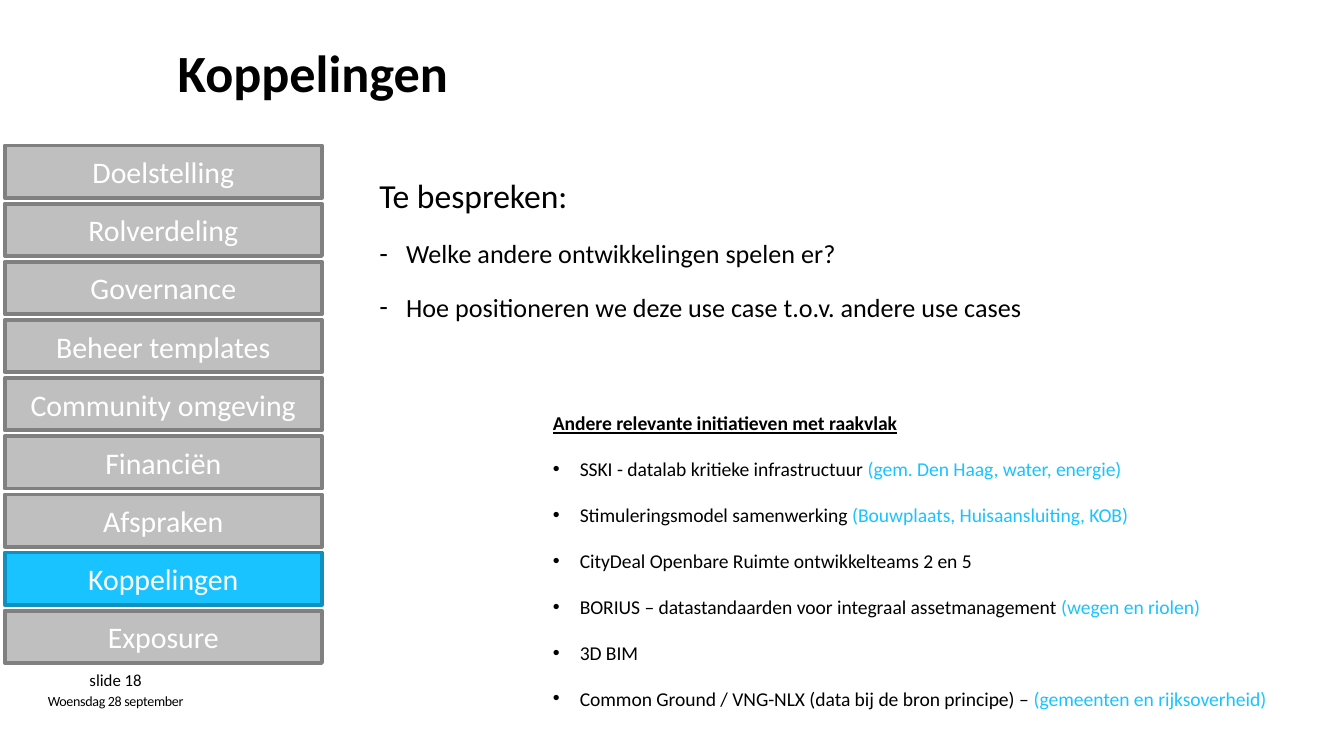
from lxml.etree import SubElement
from pptx import Presentation
from pptx.dml.color import RGBColor
from pptx.enum.shapes import MSO_SHAPE
from pptx.enum.text import MSO_ANCHOR, MSO_AUTO_SIZE, PP_ALIGN
from pptx.oxml.ns import qn
from pptx.util import Pt

COLORS = {
    "text": "000000",
    "inverse": "FFFFFF",
    "idle": "BFBFBF",
    "idle_line": "808080",
    "accent": "19C3FF",
    "accent_line": "1290BD",
}
TOPICS = [
    "Doelstelling", "Rolverdeling", "Governance", "Beheer templates",
    "Community omgeving", "Financiën", "Afspraken", "Koppelingen", "Exposure",
]
ACTIVE_TOPIC = "Koppelingen"
QUESTIONS = [
    ("Welke andere ontwikkelingen spelen er?", ""),
    ("Hoe positioneren we deze use case t.o.v. andere use cases", ""),
]
INITIATIVES = [
    ("SSKI - datalab kritieke infrastructuur ", "(gem. Den Haag, water, energie)"),
    ("Stimuleringsmodel samenwerking ", "(Bouwplaats, Huisaansluiting, KOB)"),
    ("CityDeal Openbare Ruimte ontwikkelteams 2 en 5", ""),
    ("BORIUS – datastandaarden voor integraal assetmanagement ", "(wegen en riolen)"),
    ("3D BIM", ""),
    ("Common Ground / VNG-NLX (data bij de bron principe) – ", "(gemeenten en rijksoverheid)"),
]


class SlideBuilder:
    font_name = "Calibri"
    indent = Pt(14.4)

    def __init__(self, slide):
        self.slide = slide

    def color(self, name):
        return RGBColor.from_string(COLORS[name])

    def place(self, shape, left, top, width, height):
        shape.left, shape.top = Pt(left), Pt(top)
        shape.width, shape.height = Pt(width), Pt(height)

    def format(self, paragraph, size, color="text", bold=False, align=PP_ALIGN.LEFT):
        paragraph.alignment = align
        font = paragraph.font
        font.name, font.size, font.bold = self.font_name, Pt(size), bold
        font.color.rgb = self.color(color)

    def set_bullet(self, paragraph, character=None):
        properties = paragraph._p.get_or_add_pPr()
        properties.set("marL", str(self.indent if character else 0))
        properties.set("indent", str(-self.indent if character else 0))
        if character:
            SubElement(properties, qn("a:buChar"), char=character)
        else:
            SubElement(properties, qn("a:buNone"))

    def title(self, text, *box):
        shape = self.slide.shapes.title
        self.place(shape, *box)
        frame = shape.text_frame
        frame.text = text
        frame.auto_size = MSO_AUTO_SIZE.NONE
        frame.vertical_anchor = MSO_ANCHOR.MIDDLE
        paragraph = frame.paragraphs[0]
        paragraph.line_spacing = 0.8
        self.format(paragraph, 28, bold=True)

    def bullet_list(self, index, heading, heading_size, items, size, character, *box):
        shape = self.slide.placeholders[index]
        self.place(shape, *box)
        frame = shape.text_frame
        frame.word_wrap = True
        frame.auto_size = MSO_AUTO_SIZE.NONE
        frame.text = heading
        first = frame.paragraphs[0]
        self.set_bullet(first)
        first.space_before = Pt(0)
        self.format(first, heading_size)
        for text, parties in items:
            paragraph = frame.add_paragraph()
            self.set_bullet(paragraph, character)
            paragraph.space_before = Pt(12)
            self.format(paragraph, size)
            paragraph.add_run().text = text
            if parties:
                run = paragraph.add_run()
                run.text = parties
                run.font.color.rgb = self.color("accent")
        return first

    def topic(self, text, active, *box):
        shape = self.slide.shapes.add_shape(MSO_SHAPE.RECTANGLE, *map(Pt, box))
        shape.shadow.inherit = False
        state = "accent" if active else "idle"
        shape.fill.solid()
        shape.fill.fore_color.rgb = self.color(state)
        shape.line.color.rgb = self.color(state + "_line")
        shape.line.width = Pt(2)
        frame = shape.text_frame
        frame.text = text
        frame.vertical_anchor = MSO_ANCHOR.MIDDLE
        self.format(frame.paragraphs[0], 16, "inverse", align=PP_ALIGN.CENTER)

    def label(self, text, size, anchor, *box):
        frame = self.slide.shapes.add_textbox(*map(Pt, box)).text_frame
        frame.word_wrap = True
        frame.vertical_anchor = anchor
        frame.text = text
        paragraph = frame.paragraphs[0]
        self.format(paragraph, size, align=PP_ALIGN.CENTER)
        return paragraph


def main():
    presentation = Presentation()
    presentation.slide_width, presentation.slide_height = Pt(720), Pt(405)
    builder = SlideBuilder(presentation.slides.add_slide(presentation.slide_layouts[3]))

    builder.title("Koppelingen", 88, 4.5, 596, 73.5)
    builder.bullet_list(1, "Te bespreken:", 18, QUESTIONS, 14, "-", 196, 90, 510, 110)
    heading = builder.bullet_list(
        2, "Andere relevante initiatieven met raakvlak", 10.5,
        INITIATIVES, 10.5, "•", 289, 216.7, 425, 180)
    heading.font.bold = True
    heading.font.underline = True

    for row, topic in enumerate(TOPICS):
        builder.topic(topic, topic == ACTIVE_TOPIC, 2.5, 78 + row * 31.15, 170, 28)

    date = builder.label("Woensdag 28 september", 7.5, MSO_ANCHOR.TOP, 14.4, 367.2, 95, 34)
    date.runs[0]._r.get_or_add_rPr().set("spc", "-20")
    builder.label("slide 18", 9, MSO_ANCHOR.MIDDLE, 20.2, 355.7, 83.5, 17.3)

    presentation.save("out.pptx")


if __name__ == "__main__":
    main()
